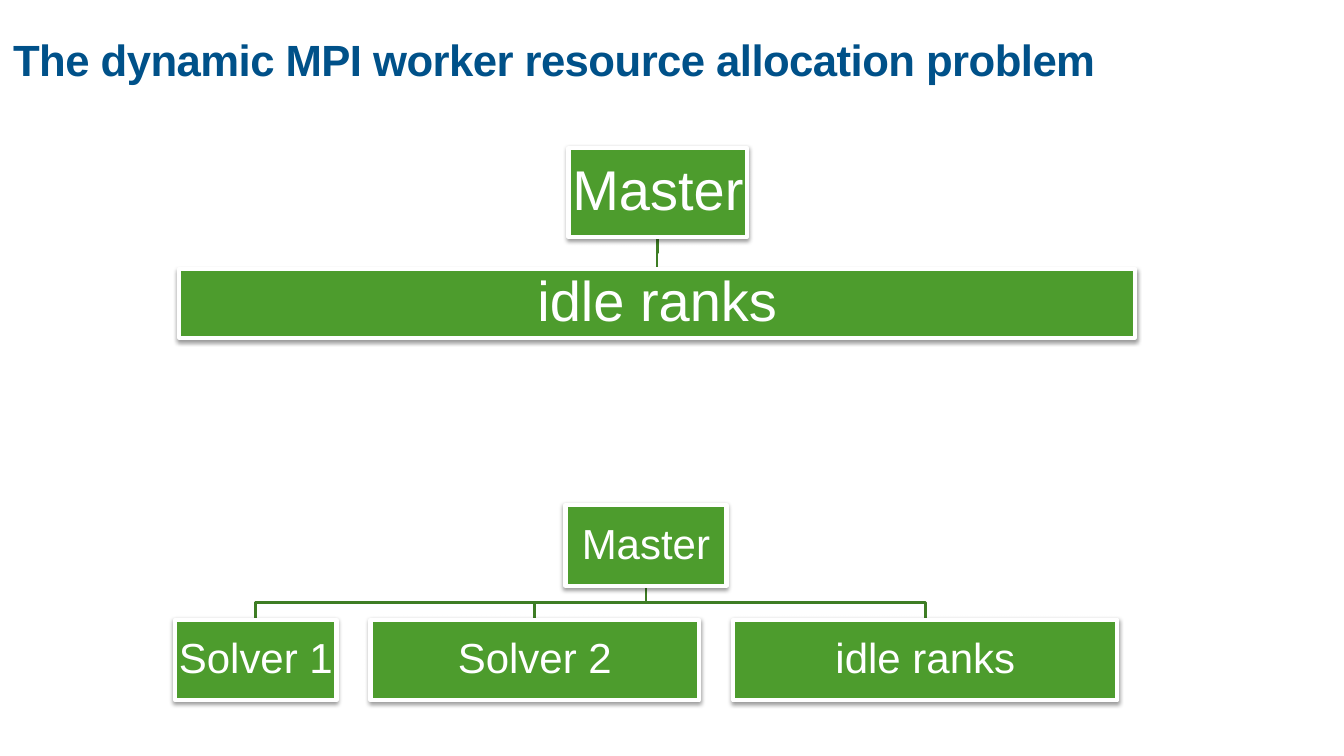
import pptx
import pptx.util
import pptx.dml.color
import pptx.enum.shapes
import pptx.enum.text
import pptx.oxml
import pptx.oxml.ns

Cm = pptx.util.Cm
Pt = pptx.util.Pt

COLORS = {"title": "005189", "box": "4D9C2D", "edge": "FFFFFF",
          "text": "FFFFFF", "link": "3E7D24"}
FONT = "Arial"
TITLE = "The dynamic MPI worker resource allocation problem"
TREES = [
    {"master": ("Master", 14.33, 3.73, 4.5, 2.24), "size": 40, "inset": 0.07,
     "left": 4.52, "gap": 0.81, "height": 1.73,
     "ranks": [("idle ranks", 24.08)]},
    {"master": ("Master", 14.25, 12.73, 4.06, 2.03), "size": 30, "inset": 0.05,
     "left": 4.42, "gap": 0.86, "height": 2.03,
     "ranks": [("Solver 1", 4.06), ("Solver 2", 8.28), ("idle ranks", 9.68)]},
]
SHADOW = (
    '<a:effectLst %s><a:outerShdw blurRad="39400" dist="20300" dir="5400000" '
    'rotWithShape="0"><a:srgbClr val="000000"><a:alpha val="38000"/>'
    '</a:srgbClr></a:outerShdw></a:effectLst>' % pptx.oxml.ns.nsdecls("a"))


def color(name):
    return pptx.dml.color.RGBColor.from_string(COLORS[name])


def format_text(frame, text, size, name, spacing, inset):
    frame.text = text
    frame.word_wrap = True
    frame.auto_size = pptx.enum.text.MSO_AUTO_SIZE.NONE
    frame.vertical_anchor = pptx.enum.text.MSO_ANCHOR.MIDDLE
    frame.margin_left = frame.margin_right = Cm(inset)
    frame.margin_top = frame.margin_bottom = Cm(inset)
    para = frame.paragraphs[0]
    para.line_spacing = spacing
    span = para.runs[0]
    span.font.name = FONT
    span.font.size = Pt(size)
    span.font.color.rgb = color(name)
    return para


def add_box(page, text, left, top, width, height, tree):
    box = page.shapes.add_shape(pptx.enum.shapes.MSO_SHAPE.RECTANGLE,
                                Cm(left), Cm(top), Cm(width), Cm(height))
    box.fill.solid()
    box.fill.fore_color.rgb = color("box")
    box.line.color.rgb = color("edge")
    box.line.width = Pt(3)
    box._element.spPr.append(pptx.oxml.parse_xml(SHADOW))
    para = format_text(box.text_frame, text, tree["size"], "text", 0.9, tree["inset"])
    para.alignment = pptx.enum.text.PP_ALIGN.CENTER


def add_link(page, start_x, start_y, end_x, end_y):
    middle_y = (start_y + end_y) / 2
    points = [(start_x, middle_y), (end_x, middle_y), (end_x, end_y)]
    builder = page.shapes.build_freeform(Cm(start_x), Cm(start_y))
    builder.add_line_segments([(Cm(x), Cm(y)) for x, y in points], close=False)
    link = builder.convert_to_shape()
    link.fill.background()
    link.line.color.rgb = color("link")
    link.line.width = Pt(2)
    link.shadow.inherit = False


def add_tree(page, tree):
    text, left, top, width, height = tree["master"]
    bottom = top + height
    ranks_top = bottom + tree["gap"]
    ranks = []
    rank_left = tree["left"]
    for name, rank_width in tree["ranks"]:
        ranks.append((name, rank_left, ranks_top, rank_width, tree["height"]))
        add_link(page, left + width / 2, bottom, rank_left + rank_width / 2, ranks_top)
        rank_left += rank_width + tree["gap"]
    for box in [tree["master"]] + ranks:
        add_box(page, *box, tree)


def main():
    deck = pptx.Presentation()
    deck.slide_width, deck.slide_height = Cm(33.87), Cm(19.05)
    page = deck.slides.add_slide(deck.slide_layouts[5])
    title = page.shapes.title
    title.left, title.top, title.width, title.height = Cm(0.33), Cm(0.43), Cm(27.33), Cm(2.34)
    para = format_text(title.text_frame, TITLE, 31.2, "title", 0.85, 0)
    para.alignment = pptx.enum.text.PP_ALIGN.LEFT
    para.runs[0].font.bold = True
    para.runs[0].font._element.set("spc", "-40")
    for tree in TREES:
        add_tree(page, tree)
    deck.save("out.pptx")


if __name__ == "__main__":
    main()
